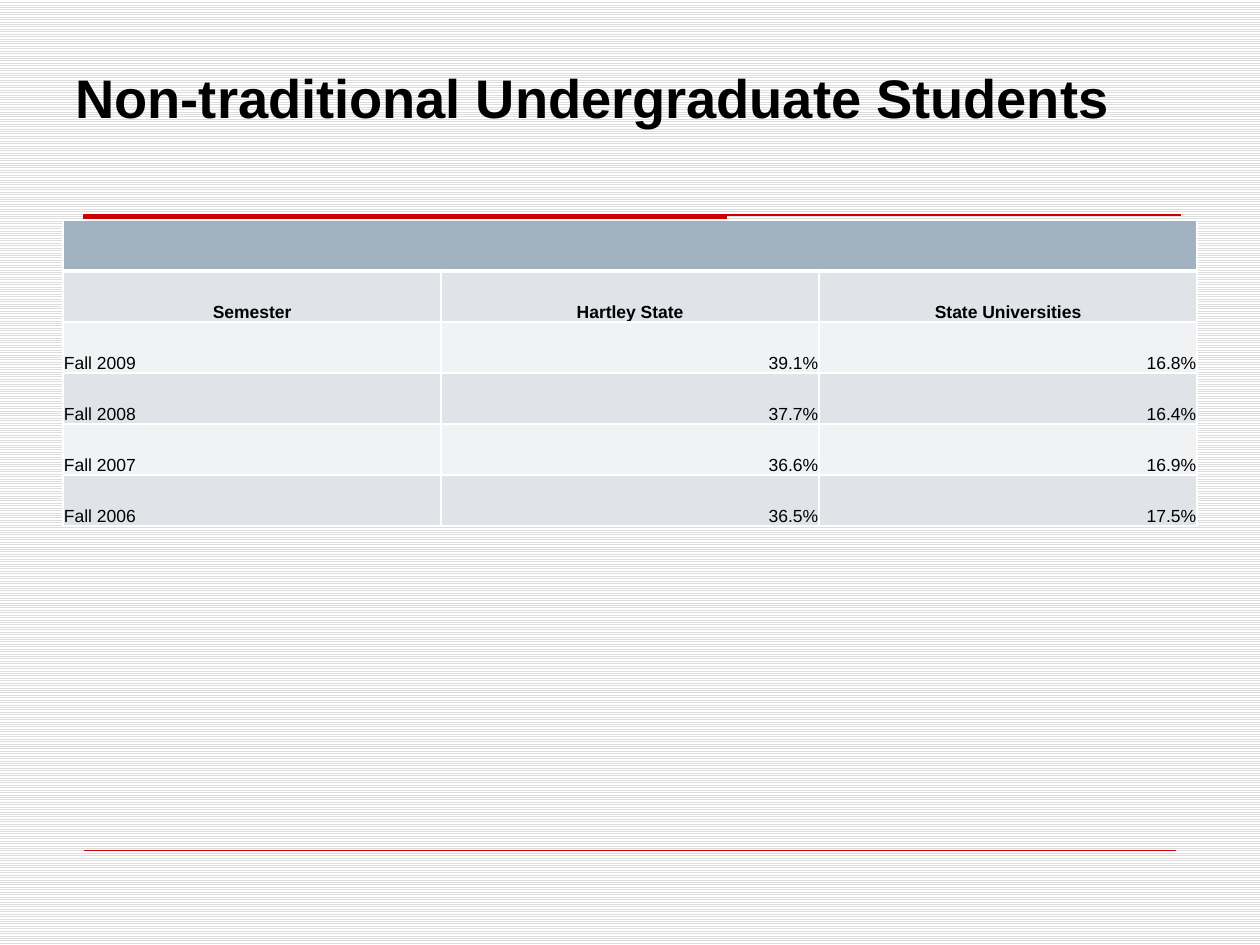
from lxml.etree import SubElement as Sub
from pptx import Presentation
from pptx.dml.color import RGBColor as Rgb
from pptx.enum.dml import MSO_PATTERN as Pat
from pptx.enum.shapes import MSO_CONNECTOR as Conn
from pptx.enum.text import MSO_ANCHOR as Anchor, PP_ALIGN as Align
from pptx.oxml.ns import qn
from pptx.util import Pt

SCALE = 914400 / 126
HUES = {
    "ink": "000000", "red": "CC0000", "white": "FFFFFF", "stripe": "DDDDDD",
    "head": "A3B2C1", "dark": "E0E4E9", "light": "F0F2F4",
}
ROWS = [
    ("", "", ""),
    ("Semester", "Hartley State", "State Universities"),
    ("Fall 2009", "39.1%", "16.8%"),
    ("Fall 2008", "37.7%", "16.4%"),
    ("Fall 2007", "36.6%", "16.9%"),
    ("Fall 2006", "36.5%", "17.5%"),
]


def px(num):
    return round(num * SCALE)


def hue(name):
    return Rgb.from_string(HUES[name])


def assign(item, form):
    for key, val in form.items():
        setattr(item, key, val)


def style(par, size, bold, align):
    par.alignment = align
    assign(par.font, {"name": "Arial", "size": Pt(size), "bold": bold})
    par.font.color.rgb = hue("ink")
    for run in par.runs:
        assign(run.font, {"name": "Arial", "size": Pt(size), "bold": bold})
        run.font.color.rgb = hue("ink")


def paint(slide):
    fill = slide.background.fill
    fill.patterned()
    fill.pattern = Pat.LIGHT_HORIZONTAL
    fill.fore_color.rgb = hue("stripe")
    fill.back_color.rgb = hue("white")


def add_bar(slide, left, top, mid, right, high):
    pen = slide.shapes.build_freeform(px(left), px(top))
    low = top + high
    edge = [(mid, top), (mid, low), (left, low)]
    pen.add_line_segments([(px(x), px(y)) for x, y in edge], close=True)
    pen.move_to(px(left), px(top))
    pen.add_line_segments([(px(right), px(top))], close=False)
    bar = pen.convert_to_shape()
    bar.shadow.inherit = False
    bar.fill.solid()
    bar.fill.fore_color.rgb = hue("red")
    bar.line.color.rgb = hue("red")
    bar.line.width = Pt(0.75)


def add_rule(slide, left, right, top):
    ends = [px(num) for num in (left, top, right, top)]
    rule = slide.shapes.add_connector(Conn.STRAIGHT, *ends)
    rule.line.color.rgb = hue("red")
    rule.line.width = Pt(0.25)
    Sub(rule._element.spPr, qn("a:effectLst"))


def set_title(slide, text):
    title = slide.shapes.title
    assign(title, {"left": px(63), "top": px(38),
                   "width": px(1134), "height": px(98)})
    frame = title.text_frame
    assign(frame, {"text": text, "word_wrap": True,
                   "vertical_anchor": Anchor.BOTTOM})
    style(frame.paragraphs[0], 31, True, Align.LEFT)


def edge_cell(cell, base):
    props = cell._tc.get_or_add_tcPr()
    for side in "LRTB":
        wide = base if side == "B" else 1
        line = Sub(props, qn(f"a:ln{side}"), w=str(Pt(wide)))
        Sub(Sub(line, qn("a:solidFill")), qn("a:srgbClr"), val=HUES["white"])


def fill_cell(cell, text, row, col):
    edge_cell(cell, 1 if row else 3)
    cell.fill.solid()
    tone = ("dark" if row % 2 else "light") if row else "head"
    cell.fill.fore_color.rgb = hue(tone)
    assign(cell, {"margin_left": px(1), "margin_right": px(1),
                  "margin_top": px(1), "margin_bottom": 0,
                  "vertical_anchor": Anchor.BOTTOM})
    if text:
        cell.text = text
        side = Align.RIGHT if col else Align.LEFT
        align = Align.CENTER if row == 1 else side
        style(cell.text_frame.paragraphs[0], 10, row == 1, align)


def add_grid(slide, rows, left, top, wide, high):
    count = len(rows[0])
    size = px(wide * count), px(high * len(rows))
    grid = slide.shapes.add_table(
        len(rows), count, px(left), px(top), *size).table
    for line in grid.rows:
        line.height = px(high)
    for row, texts in enumerate(rows):
        for col, text in enumerate(texts):
            fill_cell(grid.cell(row, col), text, row, col)
    grid.cell(0, 0).merge(grid.cell(0, count - 1))


def main():
    deck = Presentation()
    assign(deck, {"slide_width": px(1260), "slide_height": px(945)})
    slide = deck.slides.add_slide(deck.slide_layouts[5])
    paint(slide)
    add_bar(slide, 84, 215, 726, 1181, 15)
    add_rule(slide, 84, 1176, 850)
    set_title(slide, "Non-traditional Undergraduate Students")
    add_grid(slide, ROWS, 63, 220, 378, 51)
    deck.save("out.pptx")


if __name__ == "__main__":
    main()
